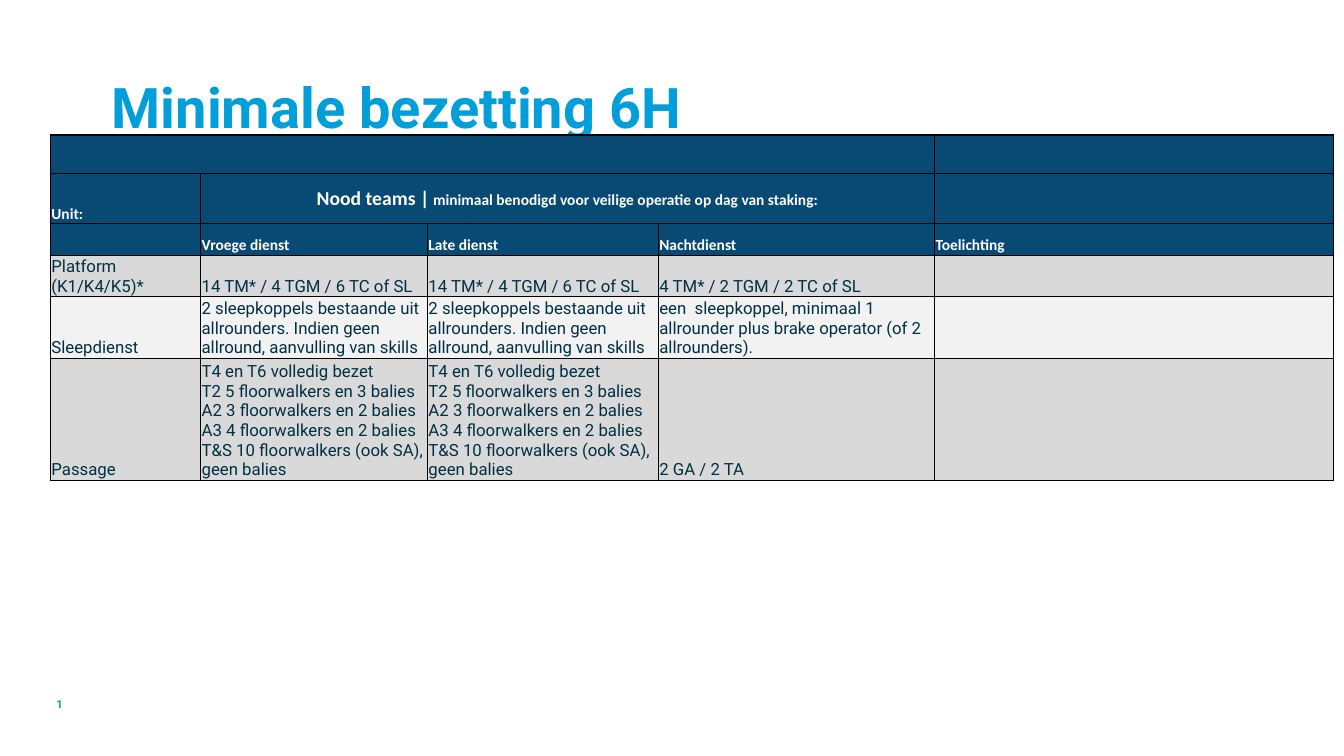
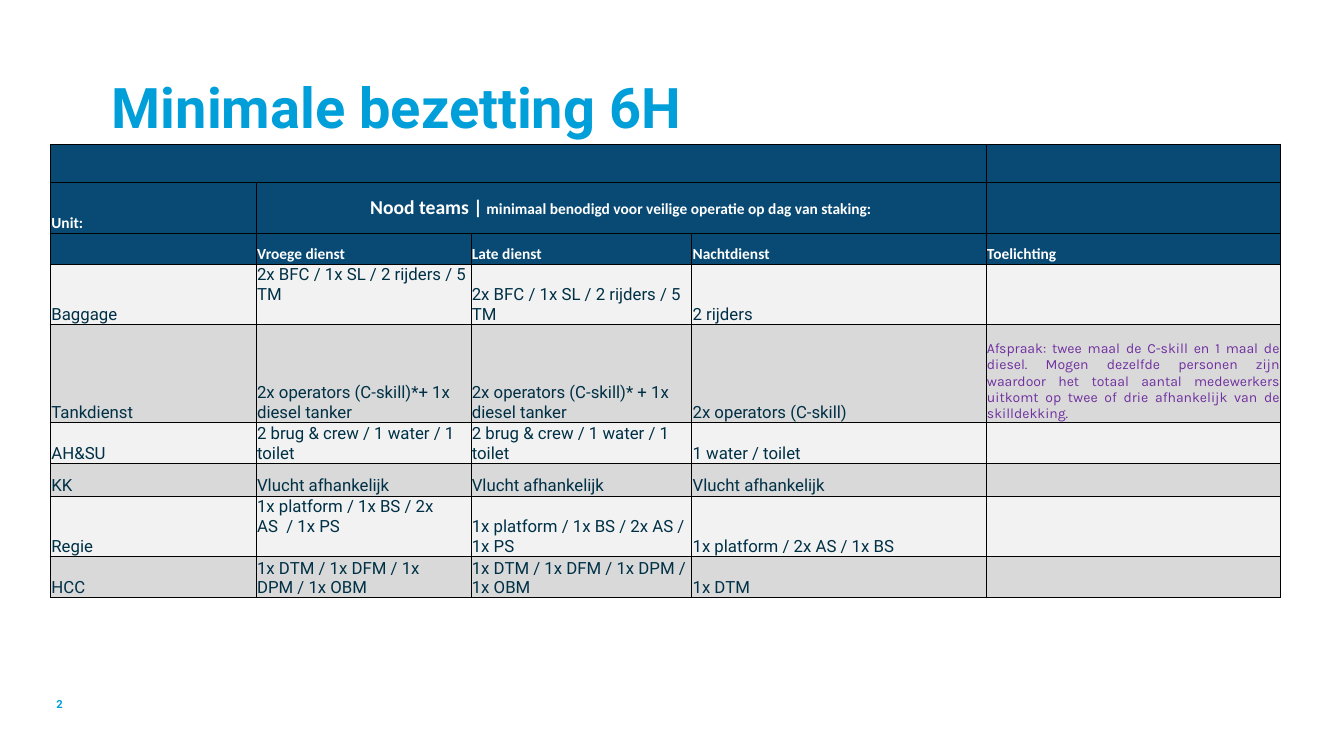
import pptx
import pptx.util
import pptx.dml.color
import pptx.enum.text
import pptx.oxml
import pptx.oxml.ns
from lxml import etree

Inches, Pt = pptx.util.Inches, pptx.util.Pt
ALIGN, ANCHOR = pptx.enum.text.PP_ALIGN, pptx.enum.text.MSO_ANCHOR

COLORS = {"title": "009FD9", "header": "084A74", "odd": "F2F2F2", "even": "D9D9D9",
          "text": "003045", "white": "FFFFFF", "note": "7030A0", "border": "000000"}
TITLE = "Minimale bezetting 6H"
HEADING = [("Nood teams |", 14), (" minimaal benodigd voor veilige operatie op dag van staking:", 11)]
SHIFTS = ["", "Vroege dienst", "Late dienst", "Nachtdienst", "Toelichting"]
HEADER_ROWS = [[""] * 5, ["Unit:", "", "", "", ""], SHIFTS]
HEADER_HEIGHTS = [0.38, 0.5, 0.3]

TOWING = "2 sleepkoppels bestaande uit allrounders. Indien geen allround, aanvulling van skills"
PASSAGE = "\n".join(["T4 en T6 volledig bezet", "T2 5 floorwalkers en 3 balies",
                     "A2 3 floorwalkers en 2 balies", "A3 4 floorwalkers en 2 balies",
                     "T&S 10 floorwalkers (ook SA), geen balies"])
CREW = "14 TM* / 4 TGM / 6 TC of SL"
BAGGAGE = "2x BFC / 1x SL / 2 rijders / 5 TM"
CONTROL = "1x DTM / 1x DFM / 1x DPM / 1x OBM"
FLIGHT = "Vlucht afhankelijk"
NOTE = ("Afspraak: twee maal de C-skill en 1 maal de diesel. Mogen dezelfde personen zijn "
        "waardoor het totaal aantal medewerkers uitkomt op twee of drie afhankelijk van de skilldekking.")

PAGES = [
    {"top": 1.34, "columns": [1.49, 2.25, 2.29, 2.74, 3.96], "heights": [0.4, 0.6, 1.17],
     "first_fill": "even", "bottom_line": 0.5, "top_cells": [],
     "rows": [
         ["Platform (K1/K4/K5)*", CREW, CREW, "4 TM* / 2 TGM / 2 TC of SL", ""],
         ["Sleepdienst", TOWING, TOWING,
          "een  sleepkoppel, minimaal 1 allrounder plus brake operator (of 2 allrounders).", ""],
         ["Passage", PASSAGE, PASSAGE, "2 GA / 2 TA", ""]]},
    {"top": 1.43, "columns": [2.04, 2.13, 2.19, 2.92, 2.92],
     "heights": [0.6, 0.97, 0.4, 0.32, 0.6, 0.4],
     "first_fill": "odd", "bottom_line": 1, "top_cells": [(3, 1), (7, 1)],
     "rows": [
         ["Baggage", BAGGAGE, BAGGAGE, "2 rijders", ""],
         ["Tankdienst", "2x operators (C-skill)*+ 1x diesel tanker",
          "2x operators (C-skill)* + 1x diesel tanker", "2x operators (C-skill)", NOTE],
         ["AH&SU", "2 brug & crew / 1 water / 1 toilet", "2 brug & crew / 1 water / 1 toilet",
          "1 water / toilet", ""],
         ["KK", FLIGHT, FLIGHT, FLIGHT, ""],
         ["Regie", "1x platform / 1x BS / 2x AS  / 1x PS", "1x platform / 1x BS / 2x AS / 1x PS",
          "1x platform / 2x AS / 1x BS", ""],
         ["HCC", CONTROL, CONTROL, "1x DTM", ""]]},
]


def rgb(name):
    return pptx.dml.color.RGBColor.from_string(COLORS[name])


def style_font(font, name, size, color, bold=False):
    font.name, font.size, font.bold = name, Pt(size), bold
    font.color.rgb = rgb(color)


def clear_margins(frame):
    frame.margin_left = frame.margin_right = frame.margin_top = frame.margin_bottom = 0


def add_title(page):
    title = page.shapes.title
    title.left, title.top, title.width, title.height = map(Inches, (1.11, 0.79, 11.64, 0.54))
    frame = title.text_frame
    frame.text = TITLE
    clear_margins(frame)
    frame.auto_size = pptx.enum.text.MSO_AUTO_SIZE.NONE
    frame.vertical_anchor = ANCHOR.TOP
    para = frame.paragraphs[0]
    para.alignment, para.line_spacing = ALIGN.LEFT, 0.9
    style_font(para.runs[0].font, "Roboto", 40, "title", True)


def add_page_number(page, number):
    box = page.shapes.add_textbox(*map(Inches, (0.56, 6.9, 0.45, 0.16)))
    frame = box.text_frame
    frame.word_wrap = True
    clear_margins(frame)
    frame.vertical_anchor = ANCHOR.MIDDLE
    para = frame.paragraphs[0]
    para.text = str(number)
    span = para.runs[0]
    style_font(span.font, "Roboto", 8, "title", True)
    element = span._r
    field = pptx.oxml.parse_xml(
        f'<a:fld {pptx.oxml.ns.nsdecls("a")} type="slidenum" '
        'id="{B6F15528-21DE-4FAA-801E-634DDDAF4B2B}"/>')
    element.addprevious(field)
    for child in list(element):
        field.append(child)
    element.getparent().remove(element)


def set_borders(cell, widths):
    properties = cell._tc.get_or_add_tcPr()
    for side, width in zip("LRTB", widths):
        line = etree.SubElement(properties, pptx.oxml.ns.qn(f"a:ln{side}"), w=str(Pt(width)))
        fill = etree.SubElement(line, pptx.oxml.ns.qn("a:solidFill"))
        etree.SubElement(fill, pptx.oxml.ns.qn("a:srgbClr"), val=COLORS["border"])


def fill_cell(cell, text, fill, is_header):
    cell.margin_left = cell.margin_right = cell.margin_top = Inches(0.01)
    cell.margin_bottom = 0
    cell.vertical_anchor = ANCHOR.BOTTOM
    cell.fill.solid()
    cell.fill.fore_color.rgb = rgb(fill)
    cell.text_frame.text = text
    for para in cell.text_frame.paragraphs:
        if text == NOTE:
            para.alignment = ALIGN.JUSTIFY
        for span in para.runs:
            if is_header:
                style_font(span.font, "Calibri", 11, "white", True)
            elif text == NOTE:
                style_font(span.font, "Karla", 10, "note")
            else:
                style_font(span.font, "Roboto", 12, "text")


def add_heading(cell):
    para = cell.text_frame.paragraphs[0]
    para.alignment = ALIGN.CENTER
    cell.vertical_anchor = ANCHOR.MIDDLE
    for text, size in HEADING:
        span = para.add_run()
        span.text = text
        style_font(span.font, "Calibri", size, "white", True)


def add_staffing_table(page, content):
    rows = HEADER_ROWS + content["rows"]
    heights = HEADER_HEIGHTS + content["heights"]
    columns = content["columns"]
    table = page.shapes.add_table(
        len(rows), len(columns), Inches(0.5), Inches(content["top"]),
        Inches(sum(columns)), Inches(sum(heights))).table
    table.first_row = table.horz_banding = False
    for column, width in zip(table.columns, columns):
        column.width = Inches(width)
    for row, height in zip(table.rows, heights):
        row.height = Inches(height)
    fills = ["even", "odd"] if content["first_fill"] == "even" else ["odd", "even"]
    last_row, last_column = len(rows) - 1, len(columns) - 1
    header_count = len(HEADER_ROWS)
    for r, texts in enumerate(rows):
        is_header = r < header_count
        fill = "header" if is_header else fills[(r - header_count) % 2]
        for c, text in enumerate(texts):
            cell = table.cell(r, c)
            set_borders(cell, (1 if c == 0 else 0.5, 1 if c == last_column else 0.5,
                               1 if r == 0 else 0.5,
                               content["bottom_line"] if r == last_row else 0.5))
            fill_cell(cell, text, fill, is_header)
    for r, c in content["top_cells"]:
        table.cell(r, c).vertical_anchor = ANCHOR.TOP
    table.cell(0, 0).merge(table.cell(0, 3))
    table.cell(1, 1).merge(table.cell(1, 3))
    add_heading(table.cell(1, 1))


def main():
    deck = pptx.Presentation()
    deck.slide_width, deck.slide_height = Inches(13.33), Inches(7.5)
    for number, content in enumerate(PAGES, 1):
        page = deck.slides.add_slide(deck.slide_layouts[5])
        add_title(page)
        add_page_number(page, number)
        add_staffing_table(page, content)
    deck.save("out.pptx")


if __name__ == "__main__":
    main()
